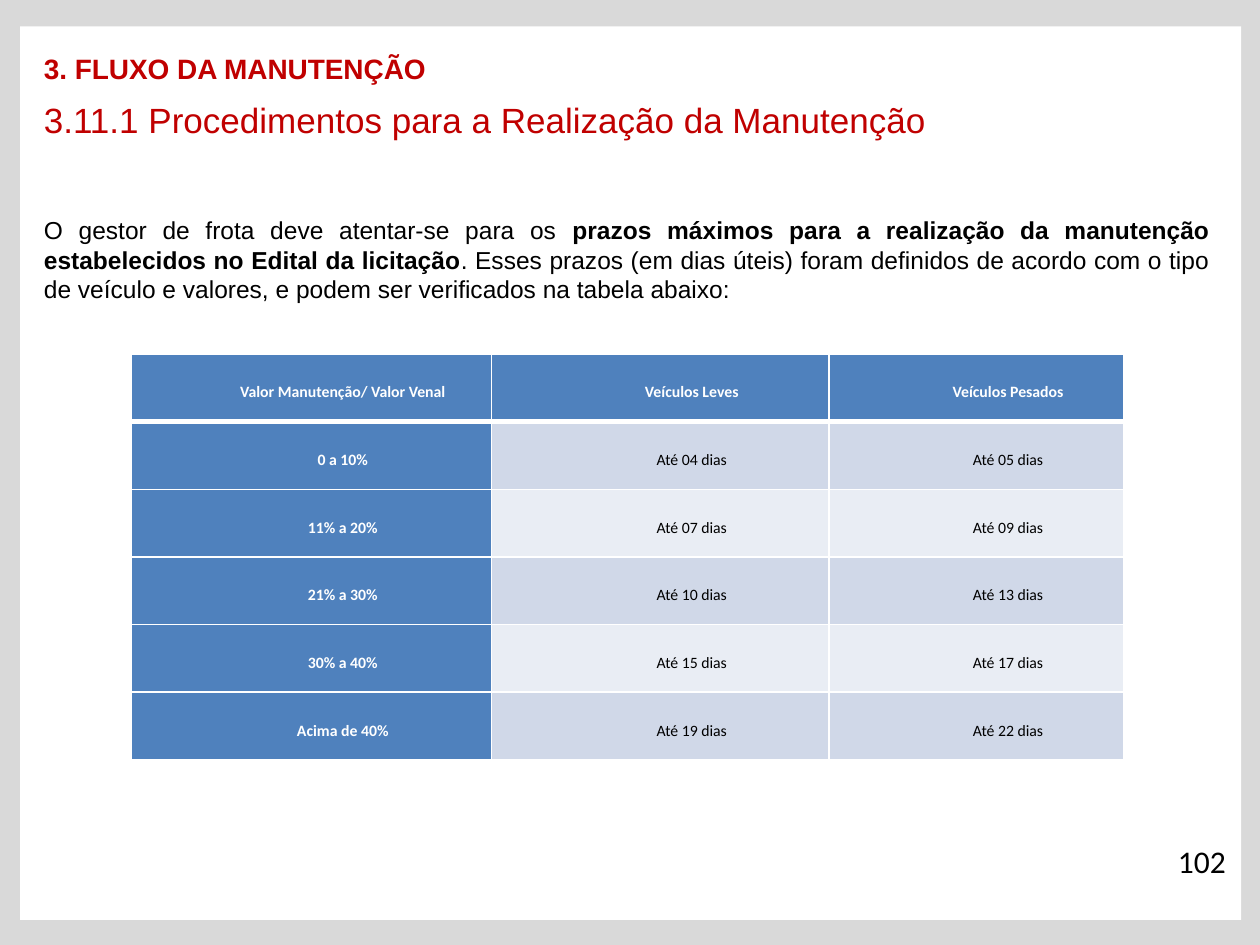
from lxml import etree
from pptx import Presentation
from pptx import util as u
from pptx.dml.color import RGBColor
from pptx.enum import shapes, text
from pptx.oxml import ns

COLORS = {
    "frame": "D9D9D9",
    "white": "FFFFFF",
    "red": "C00000",
    "black": "000000",
    "header": "4F81BD",
    "band_dark": "D0D8E8",
    "band_light": "E9EDF4",
}
DEADLINES = [
    ("Valor Manutenção/ Valor Venal", "Veículos Leves", "Veículos Pesados"),
    ("0 a 10%", "Até 04 dias", "Até 05 dias"),
    ("11% a 20%", "Até 07 dias", "Até 09 dias"),
    ("21% a 30%", "Até 10 dias", "Até 13 dias"),
    ("30% a 40%", "Até 15 dias", "Até 17 dias"),
    ("Acima de 40%", "Até 19 dias", "Até 22 dias"),
]
COLUMN_WIDTHS = (2.86, 2.68, 2.34)


def color(name):
    """Return the named colour."""
    return RGBColor.from_string(COLORS[name])


def write(paragraph, content, size=14, font="Arial", fill="black", bold=False, align=None):
    """Append a formatted run to a paragraph."""
    if align is not None:
        paragraph.alignment = align
    run = paragraph.add_run()
    run.text = content
    run.font.size = u.Pt(size)
    run.font.name = font
    run.font.bold = bold
    run.font.color.rgb = color(fill)


def add_text(slide, box, runs, **style):
    """Place a wrapped text box holding one paragraph of (text, bold) runs."""
    shape = slide.shapes.add_textbox(*map(u.Inches, box))
    shape.text_frame.word_wrap = True
    for content, bold in runs:
        write(shape.text_frame.paragraphs[0], content, bold=bold, **style)


def add_panel(slide, box, fill):
    """Draw a plain filled rectangle."""
    shape = slide.shapes.add_shape(shapes.MSO_SHAPE.RECTANGLE, *map(u.Inches, box))
    shape.shadow.inherit = False
    shape.fill.solid()
    shape.fill.fore_color.rgb = color(fill)
    shape.line.fill.background()


def set_borders(cell, **points):
    """Give a cell white borders with the widths of its sides in points."""
    properties = cell._tc.get_or_add_tcPr()
    for side in "LRTB":
        line = etree.SubElement(properties, ns.qn(f"a:ln{side}"), w=str(u.Pt(points.get(side, 1))))
        fill = etree.SubElement(line, ns.qn("a:solidFill"))
        etree.SubElement(fill, ns.qn("a:srgbClr"), val=COLORS["white"])


def fill_cell(cell, content, row, column):
    """Format one cell by its place in the table."""
    is_heading = row == 0 or column == 0
    set_borders(cell, T=3 if row == 1 else 1, B=3 if row == 0 else 1)
    cell.fill.solid()
    cell.fill.fore_color.rgb = color("header" if is_heading else "band_dark" if row % 2 else "band_light")
    cell.margin_left = cell.margin_right = u.Inches(0.07)
    cell.margin_top = cell.margin_bottom = 0
    cell.vertical_anchor = text.MSO_ANCHOR.MIDDLE
    paragraph = cell.text_frame.paragraphs[0]
    properties = paragraph._p.get_or_add_pPr()
    properties.set("marL", str(u.Inches(0.5)))
    properties.set("indent", "0")
    paragraph.line_spacing = 1.5
    write(paragraph, content, size=9, font="Calibri", bold=is_heading,
          fill="white" if is_heading else "black", align=text.PP_ALIGN.CENTER)


def add_deadline_table(slide, box):
    """Build the table of maintenance deadlines."""
    table = slide.shapes.add_table(len(DEADLINES), len(COLUMN_WIDTHS), *map(u.Inches, box)).table
    for column, width in zip(table.columns, COLUMN_WIDTHS):
        column.width = u.Inches(width)
    for row, values in enumerate(DEADLINES):
        for column, content in enumerate(values):
            fill_cell(table.cell(row, column), content, row, column)


def add_background(slide, box):
    """Draw the grey frame, the white page and the page number."""
    left, top, width, height = box
    add_panel(slide, box, "frame")
    add_panel(slide, (left + 0.16, top + 0.21, 9.69, 7.09), "white")
    add_text(slide, (left + width - 0.75, top + 6.63, 0.75, 0.4), [("102", False)], size=18, font="Calibri")


def add_headings(slide, box):
    """Place the chapter title and the section title."""
    left, top, width, height = box
    add_text(slide, (left, top, width, 0.37), [("3. FLUXO DA MANUTENÇÃO", True)], size=16, fill="red")
    add_text(slide, (left, top + 0.37, width, height - 0.37),
             [("3.11.1 Procedimentos para a Realização da Manutenção", False)],
             size=20, fill="red", align=text.PP_ALIGN.JUSTIFY)


def add_introduction(slide, box):
    """Place the paragraph that leads to the table."""
    add_text(slide, box, [
        ("O gestor de frota deve atentar-se para os ", False),
        ("prazos máximos para a realização da manutenção estabelecidos no Edital da licitação", True),
        (". Esses prazos (em dias úteis) foram definidos de acordo com o tipo de veículo e valores, "
         "e podem ser verificados na tabela abaixo:", False),
    ], align=text.PP_ALIGN.JUSTIFY)


def main():
    """Build and save the presentation."""
    presentation = Presentation()
    presentation.slide_width = u.Inches(10)
    presentation.slide_height = u.Inches(7.5)
    slide = presentation.slides.add_slide(presentation.slide_layouts[6])
    add_background(slide, (0, 0, 10, 7.5))
    add_headings(slide, (0.25, 0.36, 9.45, 0.81))
    add_introduction(slide, (0.25, 1.66, 9.45, 0.8))
    add_deadline_table(slide, (1.04, 2.81, sum(COLUMN_WIDTHS), 3.22))
    presentation.save("out.pptx")


if __name__ == "__main__":
    main()
